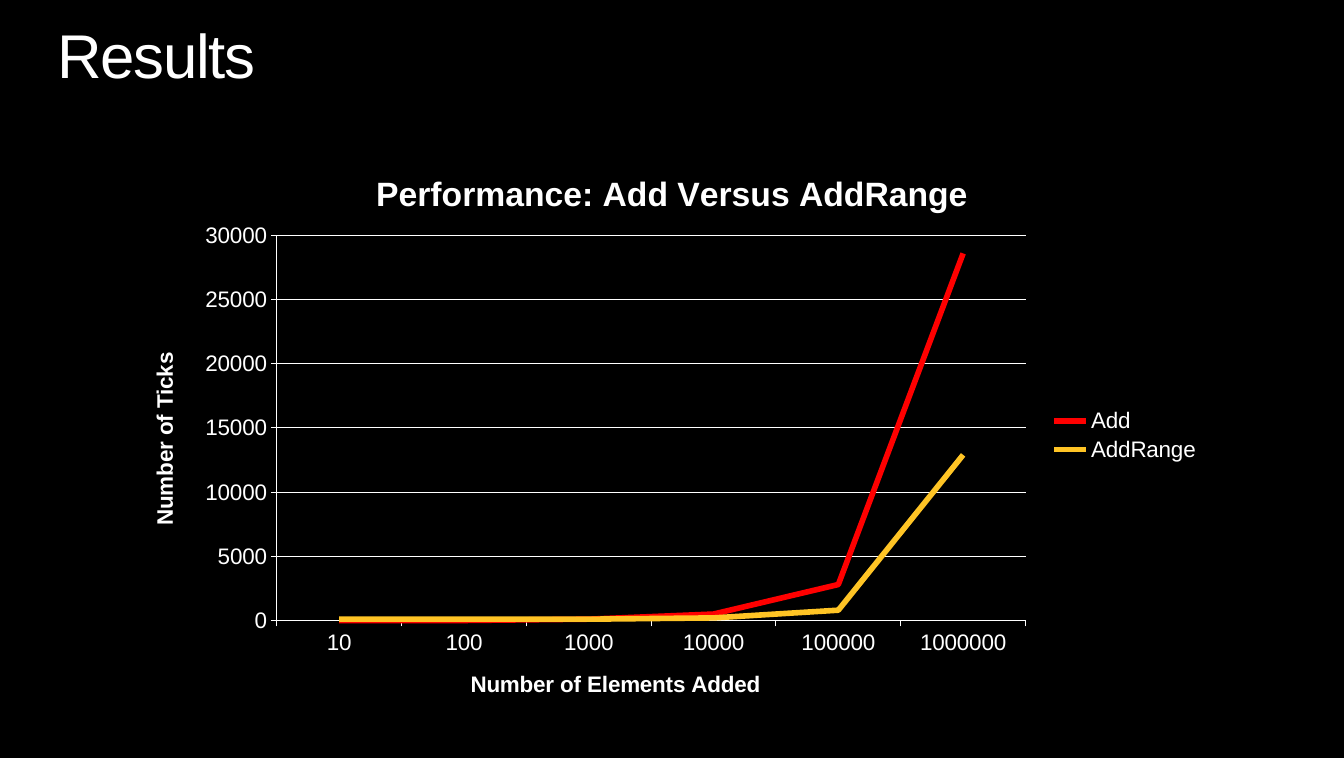
import lxml.etree
import pptx
import pptx.chart.data
import pptx.dml.color
import pptx.enum.chart
import pptx.enum.text
import pptx.oxml
import pptx.oxml.ns
import pptx.util

# Content
TITLE = "Results"
CHART_TITLE = "Performance: Add Versus AddRange"
X_TITLE, Y_TITLE = "Number of Elements Added", "Number of Ticks"
SIZES = ["10", "100", "1000", "10000", "100000", "1000000"]
SERIES = [
    ("Add", "FF0000", (0, 0, 100, 500, 2800, 28600)),
    ("AddRange", "FFC425", (100, 100, 100, 200, 800, 12900)),
]
FONT, WHITE, BLACK = "Arial", "FFFFFF", "000000"

# Boxes in inches: left, top, width, height
SLIDE = (13.3, 7.5)
TITLE_BOX = (0.57, 0.25, 12.17, 0.67)
CHART_BOX = (1.31, 1.47, 10.68, 5.67)
PLOT_BOX = (2.74, 2.33, 7.41, 3.81)


def color(hex_text):
    return pptx.dml.color.RGBColor.from_string(hex_text)


def style(font, size, bold=False, fill=WHITE):
    font.name, font.size, font.bold = FONT, pptx.util.Pt(size), bold
    font.color.rgb = color(fill)


def write(tf, text, size, bold=False, fill=WHITE):
    p = tf.paragraphs[0]
    r = p.add_run()
    r.text = text
    style(r.font, size, bold, fill)
    return p, r


def draw_line(line, width, fill=WHITE):
    line.color.rgb = color(fill)
    line.width = pptx.util.Pt(width)


def place_plot(chart):
    """Fix the inner plot area as shares of the chart's box."""
    area = chart._chartSpace.chart.plotArea
    for old in area.findall(pptx.oxml.ns.qn("c:layout")):
        area.remove(old)
    left, top, width, height = CHART_BOX
    x, y, w, h = PLOT_BOX
    shares = {"x": (x - left) / width, "y": (y - top) / height,
              "w": w / width, "h": h / height}
    values = "".join(f'<c:{k} val="{v:.4f}"/>' for k, v in shares.items())
    area.insert(0, pptx.oxml.parse_xml(
        f'<c:layout {pptx.oxml.ns.nsdecls("c")}><c:manualLayout>'
        '<c:layoutTarget val="inner"/><c:xMode val="edge"/><c:yMode val="edge"/>'
        f'{values}</c:manualLayout></c:layout>'))


def add_title(s):
    sp = s.shapes.title
    sp.left, sp.top, sp.width, sp.height = map(pptx.util.Inches, TITLE_BOX)
    tf = sp.text_frame
    tf.margin_left = tf.margin_top = tf.margin_right = tf.margin_bottom = 0
    tf.word_wrap = True
    tf.auto_size = pptx.enum.text.MSO_AUTO_SIZE.SHAPE_TO_FIT_TEXT
    tf.vertical_anchor = pptx.enum.text.MSO_ANCHOR.TOP
    p, r = write(tf, TITLE, 44)
    p.alignment = pptx.enum.text.PP_ALIGN.LEFT
    p.line_spacing = 0.9
    r.font._element.set("spc", "-100")


def add_results_chart(s):
    data = pptx.chart.data.CategoryChartData(number_format="0")
    data.categories = SIZES
    for name, _, values in SERIES:
        data.add_series(name, values)
    chart = s.shapes.add_chart(pptx.enum.chart.XL_CHART_TYPE.LINE,
                               *map(pptx.util.Inches, CHART_BOX), data).chart
    style(chart.font, 16)
    chart.has_title = True
    write(chart.chart_title.text_frame, CHART_TITLE, 24, bold=True)
    chart.chart_title.include_in_layout = False

    # Axes
    for axis, text in ((chart.category_axis, X_TITLE), (chart.value_axis, Y_TITLE)):
        axis.has_title = True
        write(axis.axis_title.text_frame, text, 16, bold=True)
        axis.major_tick_mark = pptx.enum.chart.XL_TICK_MARK.OUTSIDE
        axis.minor_tick_mark = pptx.enum.chart.XL_TICK_MARK.NONE
        style(axis.tick_labels.font, 16)
        draw_line(axis.format.line, 0.75)
    ticks = chart.value_axis
    ticks.minimum_scale, ticks.maximum_scale, ticks.major_unit = 0, 30000, 5000
    ticks.has_major_gridlines = True
    draw_line(ticks.major_gridlines.format.line, 0.75)

    # Series and legend
    chart.plots[0].vary_by_categories = False
    for series, (_, fill, _) in zip(chart.plots[0].series, SERIES):
        series.smooth = False
        series.marker.style = pptx.enum.chart.XL_MARKER_STYLE.NONE
        draw_line(series.format.line, 4, fill)
    chart.has_legend = True
    chart.legend.position = pptx.enum.chart.XL_LEGEND_POSITION.RIGHT
    chart.legend.include_in_layout = False
    style(chart.legend.font, 16)
    place_plot(chart)


def main():
    prs = pptx.Presentation()
    prs.slide_width, prs.slide_height = map(pptx.util.Inches, SLIDE)
    s = prs.slides.add_slide(prs.slide_layouts[5])
    s.background.fill.solid()
    s.background.fill.fore_color.rgb = color(BLACK)
    add_title(s)
    add_results_chart(s)
    prs.save("out.pptx")


if __name__ == "__main__":
    main()
